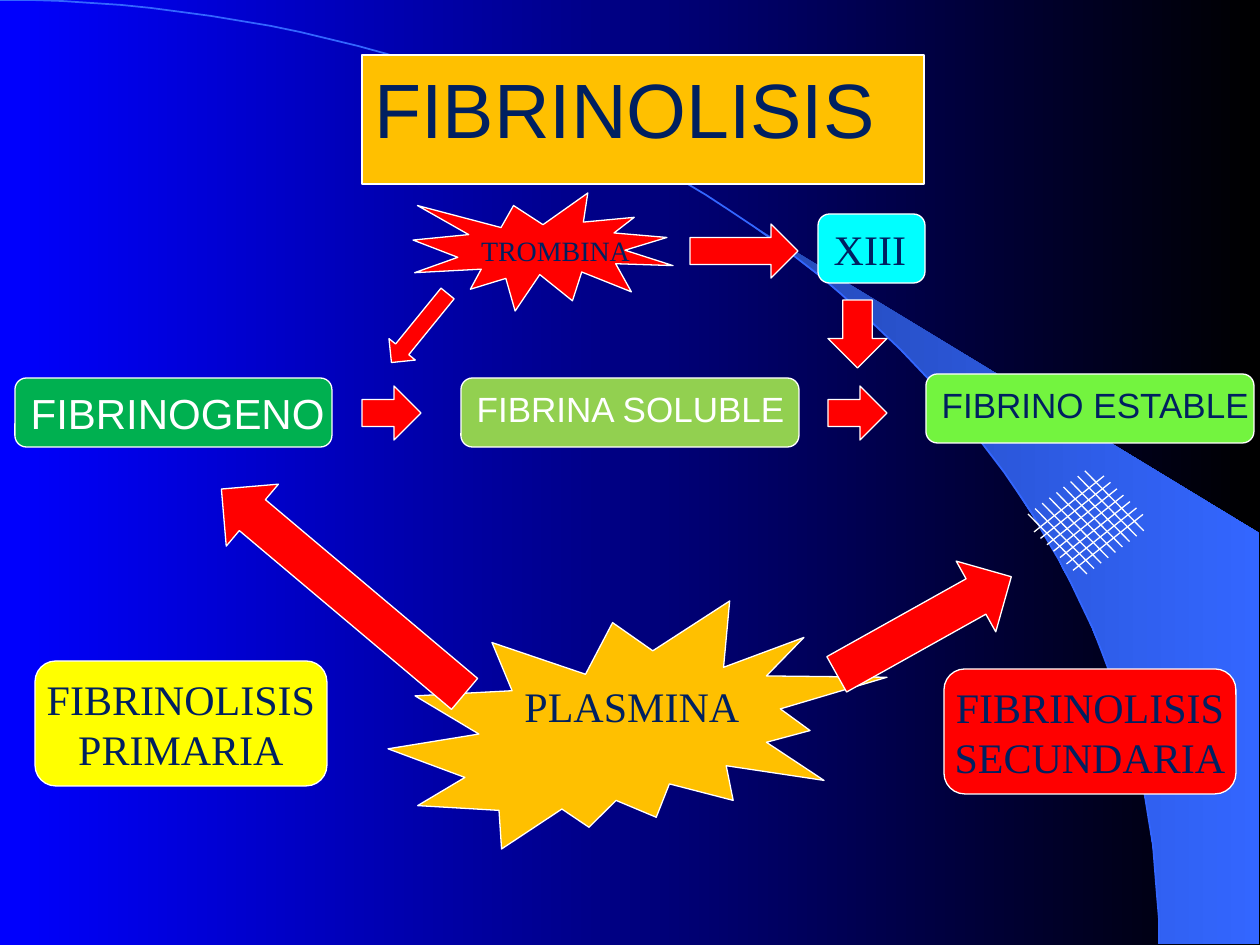
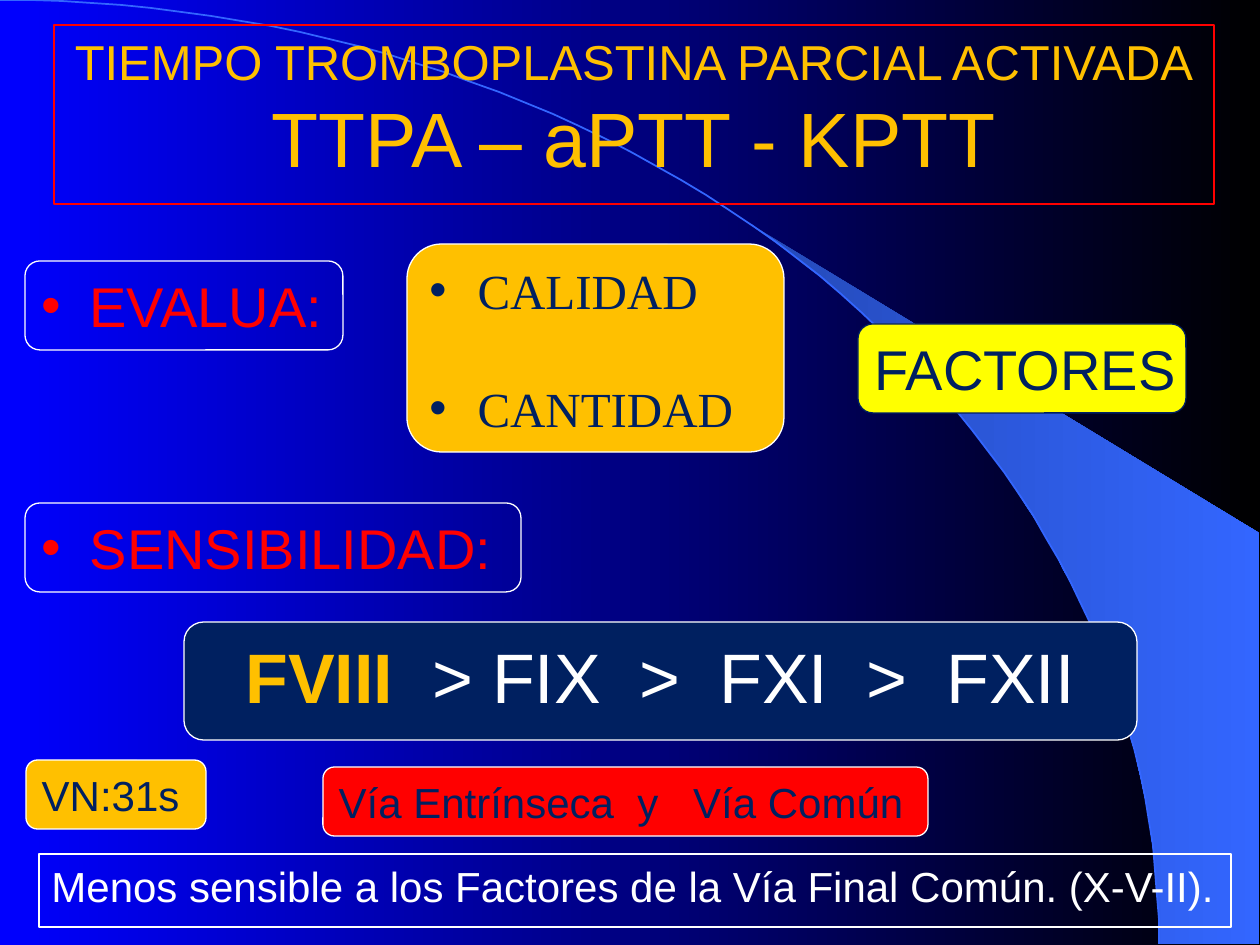
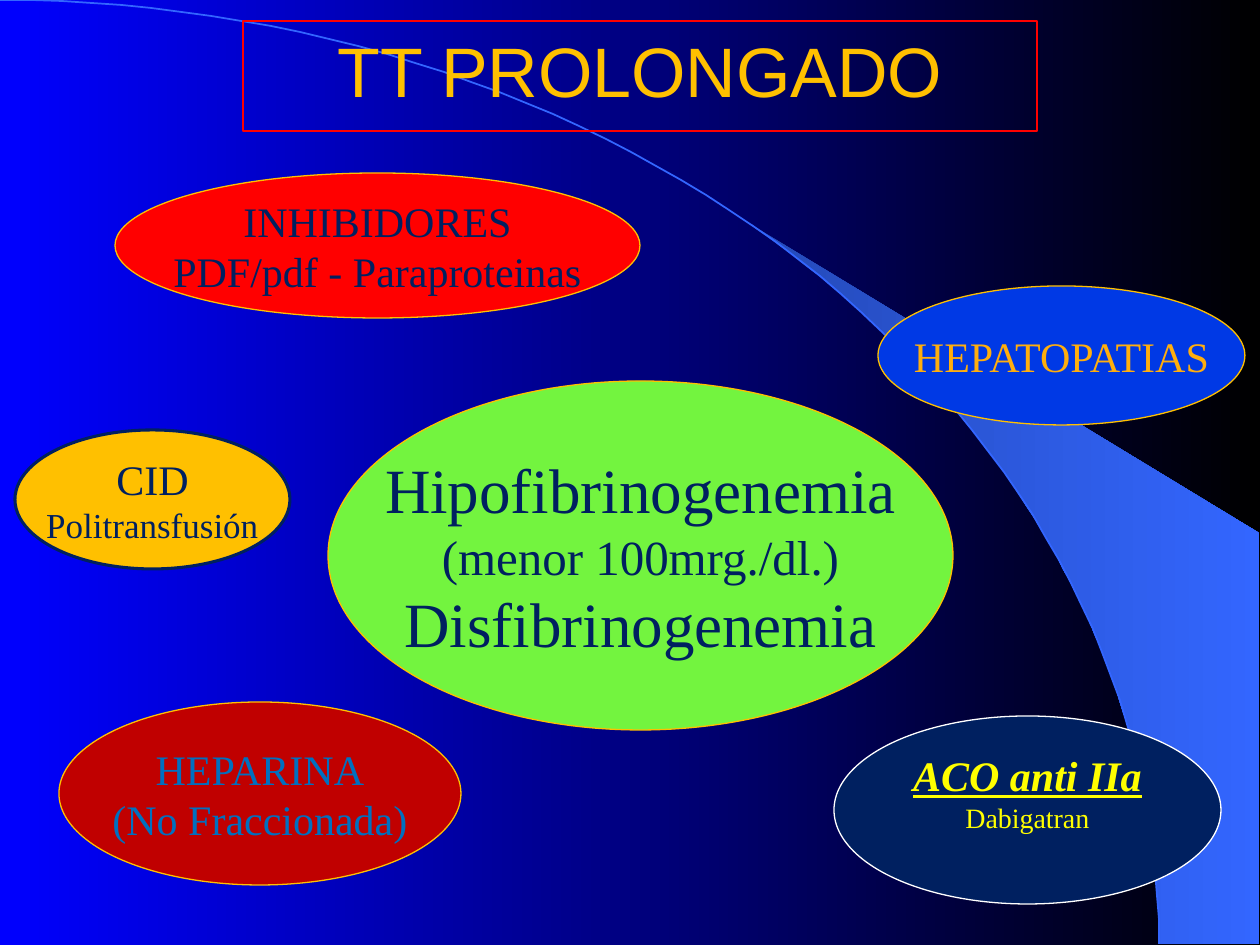
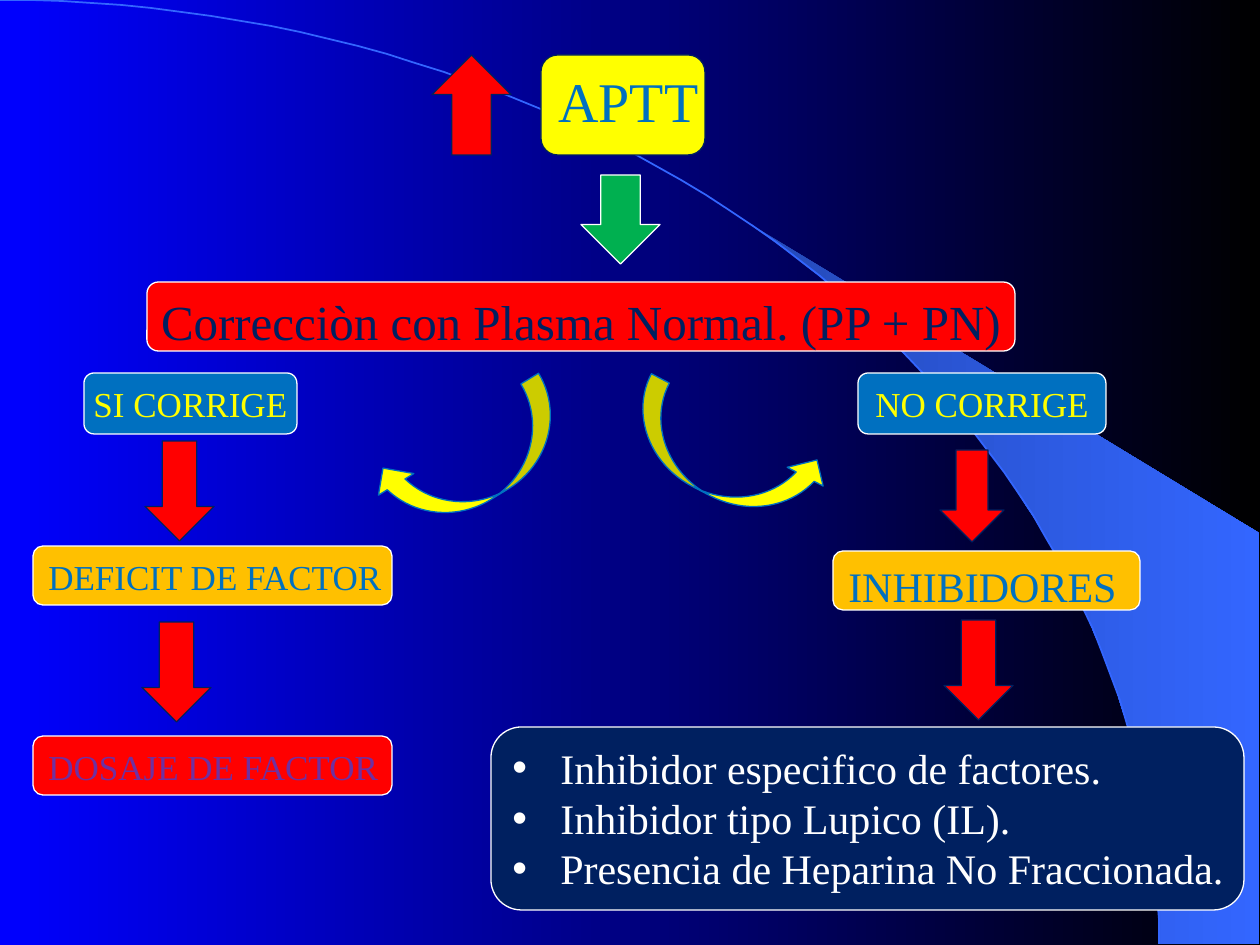
from math import asin, cos, pi, sin
from lxml.etree import SubElement
from pptx import Presentation
from pptx.dml.color import RGBColor
from pptx.enum.shapes import MSO_CONNECTOR, MSO_SHAPE
from pptx.enum.text import MSO_ANCHOR, MSO_AUTO_SIZE, PP_ALIGN
from pptx.oxml.ns import qn
from pptx.util import Emu, Pt

SCALE = 914400 / 126
SLIDE_W, SLIDE_H = 1260, 945
TITLE_ONLY, BLANK = 5, 6

WHITE, NAVY, RED, GOLD = "FFFFFF", "002060", "FF0000", "FFC000"
YELLOW, BLUE, LIME, GREEN = "FFFF00", "0070C0", "73F43F", "00B050"
BRIGHT, BLACK, BEAM_DARK, BEAM = "0000FF", "000000", "2449B6", "3366FF"
OLIVE, CYAN, ROYAL, AMBER = "92D050", "00FFFF", "0039E5", "FFAE0D"
CRIMSON, PURPLE = "C00000", "7030A0"
SANS, SERIF = "Arial", "Times New Roman"
SMALL, NOTE, BODY, LARGE, HEAD, BIG, HUGE, TITLE = 16, 20, 24, 28, 32, 36, 40, 44
THIN, LINE, MEDIUM, THICK = 0.75, 1, 1.25, 1.75

ROUND, OVAL, RECT = MSO_SHAPE.ROUNDED_RECTANGLE, MSO_SHAPE.OVAL, MSO_SHAPE.RECTANGLE
BURST, BIG_BURST = MSO_SHAPE.EXPLOSION1, MSO_SHAPE.EXPLOSION2
UP, DOWN, LEFT, RIGHT = (MSO_SHAPE.UP_ARROW, MSO_SHAPE.DOWN_ARROW,
                         MSO_SHAPE.LEFT_ARROW, MSO_SHAPE.RIGHT_ARROW)
CURVED_LEFT, CURVED_RIGHT = MSO_SHAPE.CURVED_LEFT_ARROW, MSO_SHAPE.CURVED_RIGHT_ARROW

ARC_W, ARC_H, ARC_STEPS = 1159, 944, 60
BEAM_LEFT, BEAM_RIGHT, BEAM_TOP = 742, 1259, 533

ROW, TALL_ROW, SLIM_ROW = 69, 89, 59
PANEL, FACTOR, STEP, DROP = (292, 125), (359, SLIM_ROW), (59, 54), (69, 100)

CENTER = {"align": PP_ALIGN.CENTER}
MIDDLE = {"align": PP_ALIGN.CENTER, "anchor": MSO_ANCHOR.MIDDLE}
BULLET = {"bullet": True}

# Titles: at, fill, line, line width, size, colour, paragraphs, options
# Boxes: kind, at, fill, line, font, size, colour, paragraphs, options
# Arrows: kind, at, fill, line, line width, rotation
# Mesh: first start, gap between strands, strand direction, count
SLIDES = [
    {
        "title": ((362, 55, 562, 129), GOLD, WHITE, THIN, TITLE, NAVY, ["FIBRINOLISIS"], {}),
        "boxes": [
            (ROUND, (15, 378, 317, ROW), GREEN, WHITE, SANS, BODY, WHITE, ["FIBRINOGENO"], {}),
            (ROUND, (461, 378, 338, ROW), OLIVE, WHITE, SANS, NOTE, WHITE,
             ["FIBRINA SOLUBLE"], {}),
            (ROUND, (926, 374, 328, ROW), LIME, WHITE, SANS, NOTE, NAVY,
             ["FIBRINO ESTABLE"], {}),
            (BIG_BURST, (388, 601, 499, 248), GOLD, WHITE, SERIF, BODY, NAVY, ["PLASMINA"], {}),
            (ROUND, (35, 661, *PANEL), YELLOW, WHITE, SERIF, BODY, NAVY,
             ["FIBRINOLISIS", "PRIMARIA"], CENTER),
            (ROUND, (944, 669, *PANEL), RED, WHITE, SERIF, BODY, NAVY,
             ["FIBRINOLISIS", "SECUNDARIA"], CENTER),
            (ROUND, (818, 214, 107, ROW), CYAN, WHITE, SERIF, BODY, NAVY, ["XIII"], {}),
            (BURST, (413, 193, 260, 118), RED, WHITE, SERIF, SMALL, NAVY, ["TROMBINA"], {}),
        ],
        "arrows": [
            *((RIGHT, (x, 386, *STEP), RED, WHITE) for x in (362, 828)),
            (LEFT, (184, 551, 318, 81), RED, WHITE, THIN, 40.1),
            (LEFT, (824, 585, 200, 81), RED, WHITE, THIN, 150.8),
            (DOWN, (828, 300, 59, 68), RED, WHITE),
            (RIGHT, (690, 224, 108, 54), RED, WHITE),
            (RIGHT, (375, 311, 89, 34), RED, WHITE, THIN, 129.1),
        ],
        "mesh": [((1104, 476), (6.5, 6.4), (-70, 56), 7),
                 ((1028, 514), (7.1, -5.4), (59, 60), 9)],
    },
    {
        "title": ((54, 25, 1160, 179), None, RED, MEDIUM, TITLE, GOLD,
                  [[("TIEMPO TROMBOPLASTINA PARCIAL ACTIVADA", {"size": LARGE})],
                   "TTPA – aPTT - KPTT"], CENTER),
        "boxes": [
            (ROUND, (25, 261, 318, TALL_ROW), None, WHITE, SANS, HEAD, RED, ["EVALUA:"], BULLET),
            (ROUND, (407, 244, 377, 208), GOLD, WHITE, SERIF, LARGE, NAVY,
             ["CALIDAD", "CANTIDAD"], {"bullet": True, "gap": 34}),
            (ROUND, (858, 324, 328, TALL_ROW), YELLOW, NAVY, SANS, HEAD, NAVY, ["FACTORES"], {}),
            (ROUND, (25, 503, 496, TALL_ROW), None, WHITE, SANS, HEAD, RED,
             ["SENSIBILIDAD:"], BULLET),
            (ROUND, (184, 622, 953, 118), NAVY, WHITE, SANS, HUGE, WHITE,
             [[("FVIII", {"color": GOLD, "bold": True}), ("  > FIX  >  FXI  >  FXII", {})]],
             CENTER),
            (RECT, (39, 854, 1192, 73), None, WHITE, SANS, BODY, WHITE,
             ["Menos sensible a los Factores de la Vía Final Común. (X-V-II)."], {}),
            (ROUND, (323, 767, 605, ROW), RED, WHITE, SANS, BODY, NAVY,
             ["Vía Entrínseca  y   Vía Común"], {}),
            (ROUND, (26, 760, 180, ROW), GOLD, WHITE, SANS, BODY, NAVY, ["VN:31s"], {}),
        ],
    },
    {
        "title": ((243, 21, 794, 110), None, RED, MEDIUM, HUGE, GOLD, ["TT PROLONGADO"], CENTER),
        "boxes": [
            (OVAL, (878, 286, 367, 139), ROYAL, GOLD, SERIF, BODY, AMBER,
             ["HEPATOPATIAS"], MIDDLE),
            (OVAL, (15, 430, 275, 139), GOLD, NAVY, SERIF, BODY, NAVY,
             ["CID", [("Politransfusión", {"size": NOTE})]], {**MIDDLE, "weight": THICK}),
            (OVAL, (115, 173, 525, 145), RED, GOLD, SERIF, BODY, NAVY,
             ["INHIBIDORES", "PDF/pdf - Paraproteinas"], MIDDLE),
            (OVAL, (328, 381, 625, 349), LIME, GOLD, SERIF, BIG, NAVY,
             ["Hipofibrinogenemia", [("(menor 100mrg./dl.)", {"size": LARGE})],
              "Disfibrinogenemia"], MIDDLE),
            (OVAL, (834, 716, 387, 188), NAVY, WHITE, SERIF, BODY, YELLOW,
             [[("ACO anti IIa", {"bold": True, "italic": True, "underline": True})],
              [("Dabigatran", {"size": SMALL})]], CENTER),
            (OVAL, (59, 702, 402, 183), CRIMSON, GOLD, SERIF, BODY, BLUE,
             ["HEPARINA", "(No Fraccionada)"], MIDDLE),
        ],
    },
    {
        "boxes": [
            (ROUND, (541, 55, 164, 100), YELLOW, NAVY, SERIF, HEAD, BLUE, ["APTT"], {}),
            (ROUND, (33, 546, *FACTOR), GOLD, WHITE, SERIF, NOTE, BLUE,
             ["DEFICIT DE FACTOR"], {}),
            (ROUND, (833, 551, 307, SLIM_ROW), GOLD, WHITE, SERIF, BODY, BLUE,
             ["INHIBIDORES"], {}),
            (ROUND, (147, 282, 868, ROW), RED, WHITE, SERIF, LARGE, NAVY,
             ["Correcciòn con Plasma Normal. (PP + PN)"], CENTER),
            (ROUND, (858, 373, 248, 61), BLUE, WHITE, SERIF, NOTE, YELLOW,
             ["NO CORRIGE"], CENTER),
            (ROUND, (84, 373, 213, 61), BLUE, WHITE, SERIF, NOTE, YELLOW,
             ["SI CORRIGE"], CENTER),
            (ROUND, (33, 736, *FACTOR), RED, WHITE, SERIF, NOTE, PURPLE,
             ["DOSAJE DE FACTOR"], {}),
            (ROUND, (491, 727, 753, 183), NAVY, WHITE, SERIF, BODY, WHITE,
             ["Inhibidor especifico de factores.", "Inhibidor tipo Lupico (IL).",
              "Presencia de Heparina No Fraccionada."], BULLET),
        ],
        "arrows": [
            (UP, (432, 55, 79, 100), RED, NAVY),
            (DOWN, (581, 175, 79, 89), GREEN, WHITE),
            (CURVED_RIGHT, (684, 354, 81, 207), YELLOW, BLUE, THIN, 297.5),
            (CURVED_LEFT, (432, 360, 83, 203), YELLOW, BLUE, THIN, 58.6),
            *((UP, (*corner, *DROP), RED, NAVY, THIN, 180)
              for corner in ((145, 441), (142, 622), (944, 620))),
            (UP, (940, 450, 64, 92), RED, NAVY, THIN, 180),
        ],
    },
]


def px(n):
    return Emu(round(n * SCALE))


def rgb(value):
    return RGBColor.from_string(value)


def paint(sp, fill, line, weight=THIN):
    if fill:
        sp.fill.solid()
        sp.fill.fore_color.rgb = rgb(fill)
    else:
        sp.fill.background()
    if line:
        sp.line.color.rgb = rgb(line)
        sp.line.width = Pt(weight)
    else:
        sp.line.fill.background()


def gradient(fill, *colors):
    fill.gradient()
    fill.gradient_angle = 0
    for i, (stop, color) in enumerate(zip(fill.gradient_stops, colors)):
        stop.color.rgb = rgb(color)
        stop.position = i


def add_bullet(p):
    pPr = p._p.get_or_add_pPr()
    pPr.set("marL", str(px(48)))
    pPr.set("indent", str(-px(48)))
    SubElement(pPr, qn("a:buFont"), typeface=SANS)
    SubElement(pPr, qn("a:buChar"), char="•")


def write(tf, paragraphs, font, size, color, align=PP_ALIGN.LEFT, anchor=MSO_ANCHOR.TOP,
          bullet=False, gap=0):
    tf.word_wrap = False
    tf.auto_size = MSO_AUTO_SIZE.NONE
    tf.vertical_anchor = anchor
    for i, runs in enumerate(paragraphs):
        p = tf.add_paragraph() if i else tf.paragraphs[0]
        p.alignment = align
        if i and gap:
            p.space_before = Pt(gap)
        if bullet:
            add_bullet(p)
        for text, changes in [(runs, {})] if isinstance(runs, str) else runs:
            r = p.add_run()
            r.text = text
            r.font.name = font
            r.font.size = Pt(changes.get("size", size))
            r.font.color.rgb = rgb(changes.get("color", color))
            r.font.bold = changes.get("bold", False)
            r.font.italic = changes.get("italic", False)
            r.font.underline = changes.get("underline", False)


def add_title(s, at, fill, line, weight, size, color, paragraphs, options):
    sp = s.shapes.title
    sp.left, sp.top, sp.width, sp.height = map(px, at)
    geometry = SubElement(sp._element.spPr, qn("a:prstGeom"), prst="roundRect")
    SubElement(geometry, qn("a:avLst"))
    paint(sp, fill, line, weight)
    write(sp.text_frame, paragraphs, SANS, size, color, **options)


def add_preset(s, kind, at, fill, line, weight=THIN, rotation=0):
    sp = s.shapes.add_shape(kind, *map(px, at))
    sp.shadow.inherit = False
    sp.rotation = rotation
    paint(sp, fill, line, weight)
    return sp


def add_box(s, kind, at, fill, line, font, size, color, paragraphs, options):
    style = dict(options)
    sp = add_preset(s, kind, at, fill, line, style.pop("weight", THIN))
    write(sp.text_frame, paragraphs, font, size, color, **style)


def add_mesh(s, start, gap, direction, count):
    for i in range(count):
        x, y = (a + i * b for a, b in zip(start, gap))
        dx, dy = direction
        c = s.shapes.add_connector(MSO_CONNECTOR.STRAIGHT, px(x), px(y), px(x + dx), px(y + dy))
        c.line.color.rgb = rgb(WHITE)
        c.line.width = Pt(THIN)
        SubElement(c._element.spPr, qn("a:effectLst"))


def arc_points(start):
    angles = [start + (pi / 2 - start) * i / ARC_STEPS for i in range(ARC_STEPS + 1)]
    return [(round(ARC_W * sin(a)), round(ARC_H * (1 - cos(a)))) for a in angles]


def add_outline(s, points, close):
    builder = s.shapes.build_freeform(*points[0], scale=SCALE)
    builder.add_line_segments(points[1:], close=close)
    sp = builder.convert_to_shape()
    sp.shadow.inherit = False
    return sp


def decorate_master(prs, s):
    master = prs.slide_master
    gradient(master.background.fill, BRIGHT, BLACK)
    edge = arc_points(asin(BEAM_LEFT / ARC_W))
    beam = add_outline(s, [*edge, (BEAM_RIGHT, ARC_H), (BEAM_RIGHT, BEAM_TOP)], True)
    paint(beam, None, None)
    gradient(beam.fill, BEAM_DARK, BEAM)
    arc = add_outline(s, arc_points(0), False)
    paint(arc, None, BEAM, LINE)
    for sp in (beam, arc):
        master.shapes._spTree.append(sp._element)


def main():
    prs = Presentation()
    prs.slide_width, prs.slide_height = px(SLIDE_W), px(SLIDE_H)
    for i, content in enumerate(SLIDES):
        layout = TITLE_ONLY if "title" in content else BLANK
        s = prs.slides.add_slide(prs.slide_layouts[layout])
        if i == 0:
            decorate_master(prs, s)
        if "title" in content:
            add_title(s, *content["title"])
        for box in content["boxes"]:
            add_box(s, *box)
        for arrow in content.get("arrows", []):
            add_preset(s, *arrow)
        for strands in content.get("mesh", []):
            add_mesh(s, *strands)
    prs.save("out.pptx")


if __name__ == "__main__":
    main()
